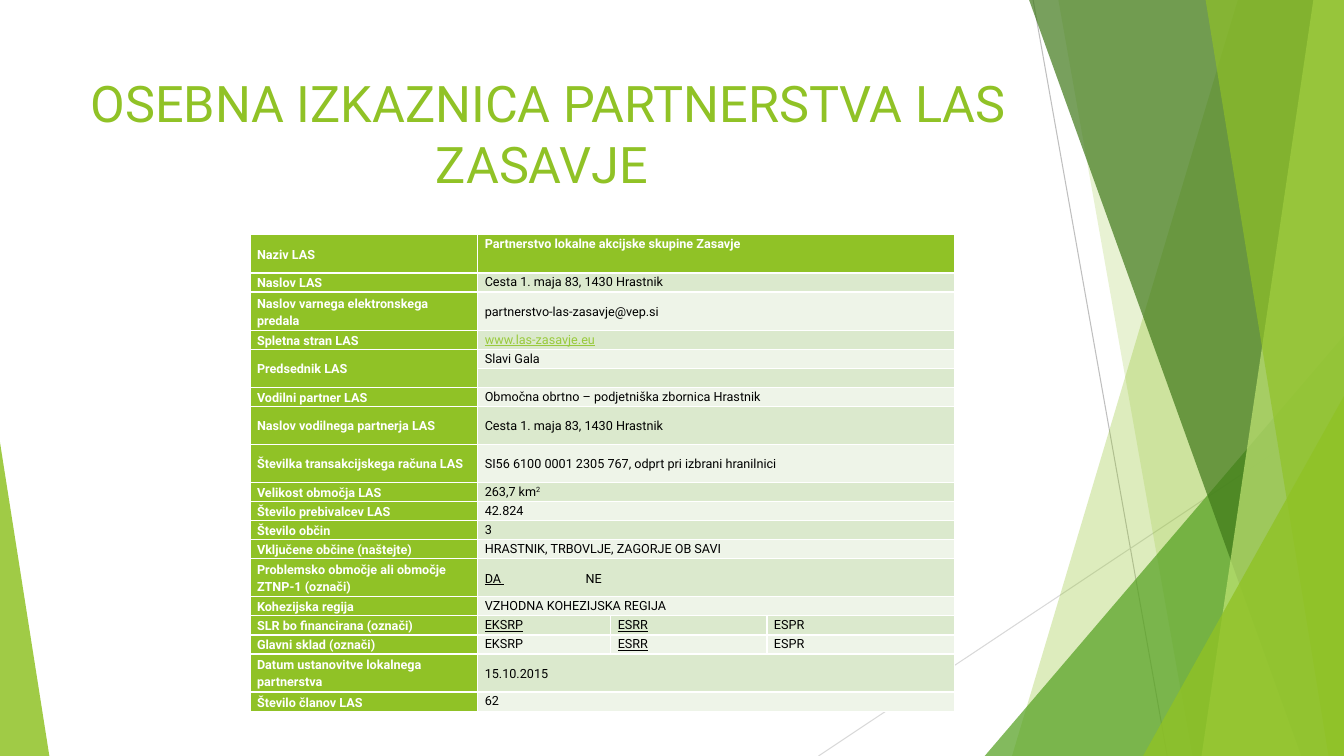
from dataclasses import dataclass
from typing import NamedTuple

from lxml.etree import SubElement
from pptx import Presentation
from pptx.dml.color import RGBColor
from pptx.enum.shapes import MSO_CONNECTOR, MSO_SHAPE
from pptx.enum.text import MSO_ANCHOR, PP_ALIGN
from pptx.oxml.ns import qn
from pptx.util import Inches, Pt

WIDE, HIGH = Inches(13.33), Inches(7.5)
FONT = "Roboto"
LIME, WHITE, BLACK = "90C226", "FFFFFF", "000000"
BANDS = ("EEF4E8", "DBE9CD")


class Part(NamedTuple):
    text: str
    under: bool = False
    color: str = BLACK
    lift: int = 0


@dataclass
class Row:
    label: str
    cells: list[list[Part]]
    units: int = 1


@dataclass
class Facet:
    points: list[tuple[float, float]]
    color: str
    alpha: int


@dataclass
class Wedge:
    left: float
    top: float
    width: float
    apex: float
    color: str
    alpha: int


@dataclass
class Ray:
    start: tuple[float, float]
    end: tuple[float, float]
    color: str


def plain(text: str, units: int = 1, label: str = "") -> Row:
    return Row(label, [[Part(text)]], units)


def band(top: float, base: float, color: str, alpha: int) -> Facet:
    """Facet that fills the slide's right edge, slanted on its left."""
    return Facet([(top, 0), (100, 0), (100, 100), (base, 100)], color, alpha)


# Places in percent of the slide's width and height
DECOR = [
    Ray((76.87, 0), (86.85, 100), "BFBFBF"),
    Ray((100, 53.73), (60.9, 100), "D9D9D9"),
    band(92.1, 75.3, LIME, 30),
    band(78.75, 88.72, LIME, 20),
    Wedge(73.27, 44.4, 26.73, 1, "54A021", 72),
    band(76.57, 96.82, "3F7819", 70),
    band(97.72, 89.4, "C0E474", 70),
    band(89.7, 98.85, LIME, 65),
    Wedge(85.05, 52.4, 14.95, 1, LIME, 80),
    Wedge(0, 58.53, 3.67, 0, LIME, 85),
]
COLS = (16.95, 9.9, 11.62, 13.95)
UNIT = 2.52
ROWS = [
    Row("Naziv LAS", [[Part("Partnerstvo lokalne akcijske skupine Zasavje", color=WHITE)]], 2),
    plain("Cesta 1. maja 83, 1430 Hrastnik", label="Naslov LAS"),
    plain("partnerstvo-las-zasavje@vep.si", 2, "Naslov varnega elektronskega predala"),
    Row("Spletna stran LAS", [[Part("www.las-zasavje.eu", True, "99CA3C")]]),
    plain("Slavi Gala", label="Predsednik LAS"),
    Row("", [[]]),
    plain("Območna obrtno – podjetniška zbornica Hrastnik", label="Vodilni partner LAS"),
    plain("Cesta 1. maja 83, 1430 Hrastnik", 2, "Naslov vodilnega partnerja LAS"),
    plain("SI56 6100 0001 2305 767, odprt pri izbrani hranilnici", 2,
          "Številka transakcijskega računa LAS"),
    Row("Velikost območja LAS", [[Part("263,7 km"), Part("2", lift=30000)]]),
    plain("42.824", label="Število prebivalcev LAS"),
    plain("3", label="Število občin"),
    plain("HRASTNIK, TRBOVLJE, ZAGORJE OB SAVI", label="Vključene občine (naštejte)"),
    Row("Problemsko območje ali območje ZTNP-1 (označi)",
        [[Part("DA ", True), Part("\tNE")]], 2),
    plain("VZHODNA KOHEZIJSKA REGIJA", label="Kohezijska regija"),
    Row("SLR bo financirana (označi)",
        [[Part("EKSRP", True)], [Part("ESRR", True)], [Part("ESPR")]]),
    Row("Glavni sklad (označi)", [[Part("EKSRP")], [Part("ESRR", True)], [Part("ESPR")]]),
    plain("15.10.2015", 2, "Datum ustanovitve lokalnega partnerstva"),
    plain("62", label="Število članov LAS"),
]


def across(share: float) -> int:
    return round(WIDE * share / 100)


def down(share: float) -> int:
    return round(HIGH * share / 100)


def paint(fill, color: str, alpha: int = 100) -> None:
    fill.solid()
    fill.fore_color.rgb = RGBColor.from_string(color)
    if alpha < 100:
        tint = fill._xPr.find(qn("a:solidFill"))[0]
        SubElement(tint, qn("a:alpha"), val=str(alpha * 1000))


def style(font, size: float, color: str, bold: bool = False) -> None:
    font.name, font.size, font.bold = FONT, Pt(size), bold
    font.color.rgb = RGBColor.from_string(color)


def draw(shapes, item: Facet | Wedge | Ray) -> None:
    if isinstance(item, Ray):
        line = shapes.add_connector(
            MSO_CONNECTOR.STRAIGHT, across(item.start[0]), down(item.start[1]),
            across(item.end[0]), down(item.end[1]))
        line.line.width = Pt(0.75)
        line.line.color.rgb = RGBColor.from_string(item.color)
        SubElement(line._element.spPr, qn("a:effectLst"))
        return
    if isinstance(item, Facet):
        spots = [(across(x), down(y)) for x, y in item.points]
        pen = shapes.build_freeform(*spots[0])
        pen.add_line_segments(spots[1:], close=True)
        shape = pen.convert_to_shape()
    else:
        shape = shapes.add_shape(
            MSO_SHAPE.ISOSCELES_TRIANGLE, across(item.left), down(item.top),
            across(item.width), down(100 - item.top))
        shape.adjustments[0] = item.apex
    shape.shadow.inherit = False
    shape.line.fill.background()
    paint(shape.fill, item.color, item.alpha)


def write(cell, parts: list[Part], fill: str, bold: bool, middle: bool) -> None:
    cell.margin_left = cell.margin_right = Inches(0.07)
    cell.margin_top = cell.margin_bottom = 0
    cell.vertical_anchor = MSO_ANCHOR.MIDDLE if middle else MSO_ANCHOR.TOP
    paint(cell.fill, fill)
    para = cell.text_frame.paragraphs[0]
    para.line_spacing = 1.15
    for part in parts:
        run = para.add_run()
        run.text = part.text
        style(run.font, 9, part.color, bold)
        run.font.underline = part.under
        if part.lift:
            run.font._element.set("baseline", str(part.lift))
        if "\t" in part.text:
            stops = SubElement(para._p.get_or_add_pPr(), qn("a:tabLst"))
            SubElement(stops, qn("a:tab"), pos=str(Inches(1)), algn="l")
    if not parts:
        SubElement(para._p, qn("a:endParaRPr"), sz="900")


def build(shapes) -> None:
    units = sum(row.units for row in ROWS)
    table = shapes.add_table(
        len(ROWS), len(COLS), across(18.6), down(31.07),
        across(sum(COLS)), down(UNIT * units)).table
    for col, share in zip(table.columns, COLS):
        col.width = across(share)
    for i, row in enumerate(ROWS):
        table.rows[i].height = down(UNIT * row.units)
        head = [Part(row.label, color=WHITE)] if row.label else []
        write(table.cell(i, 0), head, LIME, True, True)
        for j in range(1, len(COLS)):
            parts = row.cells[j - 1] if j <= len(row.cells) else []
            write(table.cell(i, j), parts, BANDS[i % 2] if i else LIME,
                  i == 0, i > 0 and row.units > 1)
        if len(row.cells) == 1:
            table.cell(i, 1).merge(table.cell(i, 3))
        if not row.label:
            table.cell(i - 1, 0).merge(table.cell(i, 0))


def main() -> None:
    deck = Presentation()
    deck.slide_width, deck.slide_height = WIDE, HIGH
    slide = deck.slides.add_slide(deck.slide_layouts[5])

    # Title
    title = slide.shapes.title
    title.left, title.top = across(5.55), down(8.93)
    title.width, title.height = across(70.5), down(19.2)
    frame = title.text_frame
    frame.text = "OSEBNA IZKAZNICA PARTNERSTVA LAS ZASAVJE "
    frame.vertical_anchor = MSO_ANCHOR.TOP
    frame.paragraphs[0].alignment = PP_ALIGN.CENTER
    style(frame.paragraphs[0].runs[0].font, 36, LIME)

    # Green facets, then the table above them
    for item in DECOR:
        draw(slide.shapes, item)
    build(slide.shapes)
    deck.save("out.pptx")


if __name__ == "__main__":
    main()
